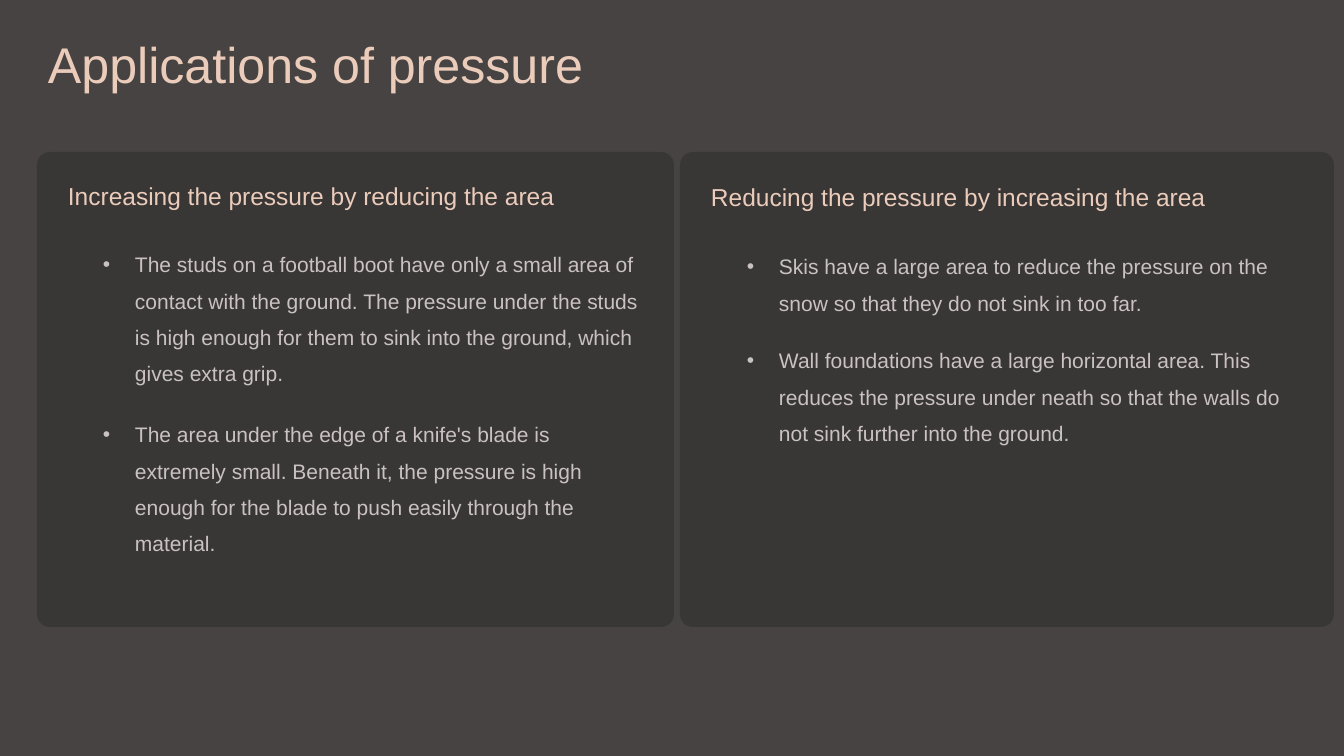
from dataclasses import dataclass
from typing import NamedTuple

from lxml import etree
from pptx import Presentation, util as u
from pptx.dml.color import RGBColor
from pptx.enum import shapes, text
from pptx.oxml.ns import qn

PX_PER_INCH = 84
BACKGROUND = RGBColor(0x46, 0x43, 0x42)
CARD_FILL = RGBColor(0x39, 0x36, 0x36)
PEACH = RGBColor(0xEB, 0xCC, 0xBB)
GREY = RGBColor(0xC9, 0xC2, 0xC0)
CORNER = 13
INSET = 4
INDENT = 32


def px(n: int) -> int:
    return u.Emu(round(n * 914400 / PX_PER_INCH))


class Box(NamedTuple):
    x: int
    y: int
    w: int
    h: int

    def emu(self) -> list[int]:
        return [px(n) for n in self]


class Style(NamedTuple):
    size: int
    leading: int
    color: RGBColor
    bullet: bool = False
    wrap: bool = True


TITLE = Style(43, 56, PEACH, wrap=False)
HEADING = Style(21, 28, PEACH)
BULLET = Style(18, 31, GREY, bullet=True)


@dataclass
class Label:
    box: Box
    words: str
    style: Style


@dataclass
class Card:
    box: Box
    labels: list[Label]


CARDS = [
    Card(Box(37, 152, 637, 475), [
        Label(Box(64, 174, 539, 44), "Increasing the pressure by reducing the area", HEADING),
        Label(Box(99, 237, 548, 164),
              "The studs on a football boot have only a small area of contact with the ground. "
              "The pressure under the studs is high enough for them to sink into the ground, "
              "which gives extra grip.", BULLET),
        Label(Box(99, 407, 548, 164),
              "The area under the edge of a knife's blade is extremely small. Beneath it, the "
              "pressure is high enough for the blade to push easily through the material.", BULLET),
    ]),
    Card(Box(680, 152, 654, 475), [
        Label(Box(707, 175, 564, 44), "Reducing the pressure by increasing the area", HEADING),
        Label(Box(743, 239, 563, 87),
              "Skis have a large area to reduce the pressure on the snow so that they do not "
              "sink in too far.", BULLET),
        Label(Box(743, 333, 563, 128),
              "Wall foundations have a large horizontal area. This reduces the pressure under "
              "neath so that the walls do not sink further into the ground.", BULLET),
    ]),
]


def apply(obj: object, formats: dict[str, object]) -> None:
    for name, value in formats.items():
        setattr(obj, name, value)


def add_label(parent, label: Label) -> None:
    style = label.style
    tf = parent.add_textbox(*label.box.emu()).text_frame
    apply(tf, {f"margin_{side}": px(INSET) for side in ("left", "top", "right", "bottom")})
    apply(tf, {"word_wrap": style.wrap, "vertical_anchor": text.MSO_ANCHOR.TOP})
    if not style.wrap:
        tf.auto_size = text.MSO_AUTO_SIZE.SHAPE_TO_FIT_TEXT
    p = tf.paragraphs[0]
    p.line_spacing = u.Pt(style.leading)
    r = p.add_run()
    r.text = label.words
    apply(r.font, {"name": "Arial", "size": u.Pt(style.size)})
    r.font.color.rgb = style.color
    if style.bullet:
        pPr = p._p.get_or_add_pPr()
        pPr.set("marL", str(px(INDENT)))
        pPr.set("indent", str(-px(INDENT)))
        etree.SubElement(pPr, qn("a:buFont")).set("typeface", "Arial")
        etree.SubElement(pPr, qn("a:buChar")).set("char", "•")


def add_card(parent, card: Card) -> None:
    group = parent.add_group_shape().shapes
    sp = group.add_shape(shapes.MSO_SHAPE.ROUNDED_RECTANGLE, *card.box.emu())
    sp.adjustments[0] = CORNER / min(card.box.w, card.box.h)
    sp.shadow.inherit = False
    sp.fill.solid()
    sp.fill.fore_color.rgb = CARD_FILL
    sp.line.fill.background()
    for label in card.labels:
        add_label(group, label)


def main() -> None:
    prs = Presentation()
    apply(prs, {"slide_width": px(1344), "slide_height": px(756)})
    s = prs.slides.add_slide(prs.slide_layouts[6])

    # Background
    s.background.fill.solid()
    s.background.fill.fore_color.rgb = BACKGROUND

    # Title
    add_label(s.shapes, Label(Box(44, 24, 545, 72), "Applications of pressure", TITLE))

    # Two cards with their headings and bullets
    for card in CARDS:
        add_card(s.shapes, card)

    prs.save("out.pptx")


if __name__ == "__main__":
    main()
